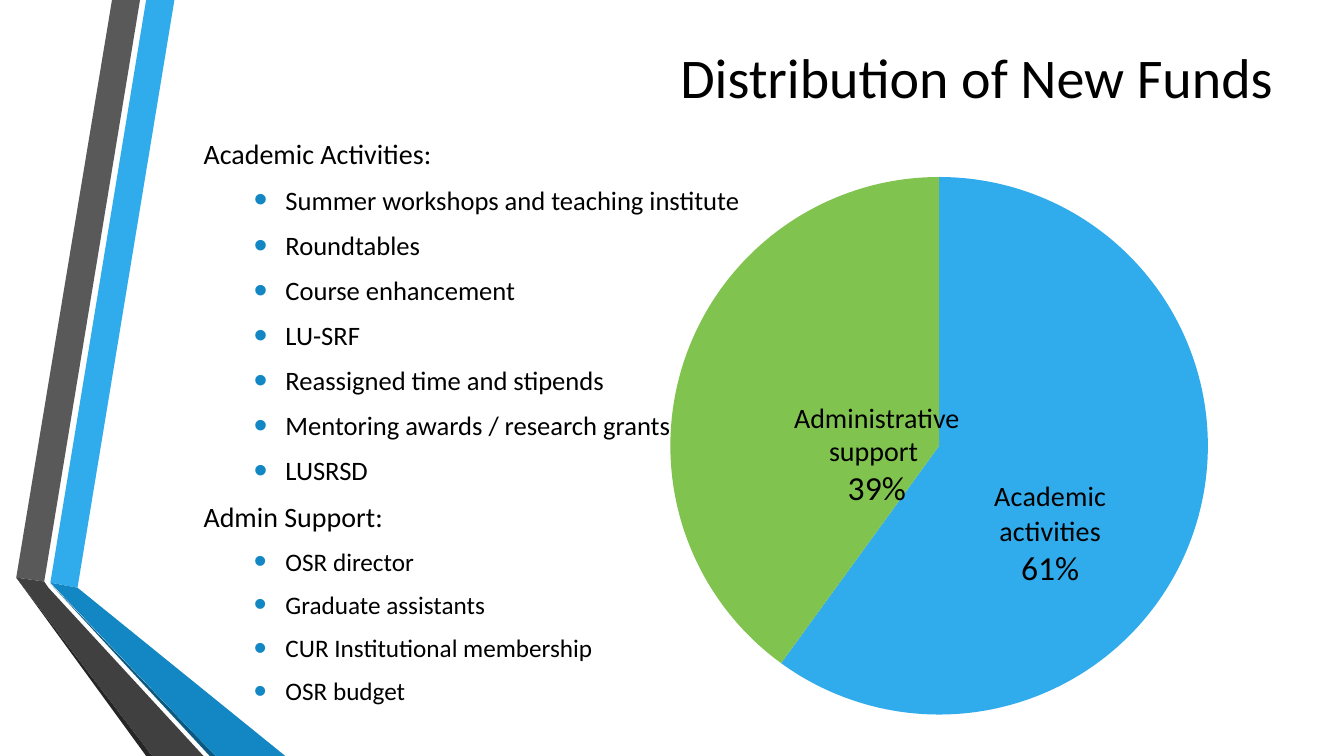
from dataclasses import dataclass

from lxml.etree import SubElement
from pptx import Presentation
from pptx.chart.data import CategoryChartData
from pptx.dml.color import RGBColor
from pptx.enum.chart import XL_CHART_TYPE, XL_LABEL_POSITION
from pptx.enum.text import MSO_ANCHOR, MSO_AUTO_SIZE, PP_ALIGN
from pptx.oxml import parse_xml
from pptx.oxml.ns import nsdecls, qn
from pptx.util import Pt

FONT = "Calibri"
BLACK = RGBColor(0x00, 0x00, 0x00)
SKY = RGBColor(0x30, 0xAC, 0xEC)
BLUE = RGBColor(0x12, 0x87, 0xC3)
NAVY = RGBColor(0x0C, 0x5A, 0x82)
GREY = RGBColor(0x59, 0x59, 0x59)
CHARCOAL = RGBColor(0x40, 0x40, 0x40)
SOOT = RGBColor(0x26, 0x26, 0x26)
GREEN = RGBColor(0x80, 0xC3, 0x4F)


@dataclass
class Band:
    color: RGBColor
    points: list[tuple[float, float]]


@dataclass
class Section:
    heading: str
    item_size: int
    items: list[str]


BANDS = [
    Band(SKY, [(36, 416.2), (55.4, 419.8), (124.6, 0), (104.4, 0)]),
    Band(GREY, [(100, 0), (80, 0), (11.6, 412.6), (31.6, 415.4)]),
    Band(SOOT, [(11.6, 412.6), (104.4, 540), (108.8, 540)]),
    Band(NAVY, [(36, 416.9), (149.8, 540), (154, 540)]),
    Band(BLUE, [(36, 416.2), (154, 540), (203.8, 540), (55.4, 419.8)]),
    Band(CHARCOAL, [(145.4, 540), (34.6, 419.8), (31.6, 415.4),
                    (11.6, 412.6), (108.8, 540)]),
]

SECTIONS = [
    Section("Academic Activities:", 19, [
        "Summer workshops and teaching institute", "Roundtables",
        "Course enhancement", "LU-SRF", "Reassigned time and stipends",
        "Mentoring awards / research grants", "LUSRSD"]),
    Section("Admin Support:", 18, [
        "OSR director", "Graduate assistants",
        "CUR Institutional membership", "OSR budget"]),
]


def place(sp, left: float, top: float, width: float, height: float) -> None:
    sp.left, sp.top = Pt(left), Pt(top)
    sp.width, sp.height = Pt(width), Pt(height)


def style(font, size: float) -> None:
    font.name, font.size = FONT, Pt(size)
    font.color.rgb = BLACK


def write_lines(tf, lines: list[tuple[str, int]]) -> None:
    """Fill a text frame with centred lines of given sizes."""
    for i, (text, size) in enumerate(lines):
        p = tf.add_paragraph() if i else tf.paragraphs[0]
        p.alignment = PP_ALIGN.CENTER
        r = p.add_run()
        r.text = text
        style(r.font, size)


def draw_band(slide, band: Band) -> None:
    start, *rest = [(Pt(x), Pt(y)) for x, y in band.points]
    builder = slide.shapes.build_freeform(*start, scale=1.0)
    builder.add_line_segments(rest, close=True)
    sp = builder.convert_to_shape()
    sp.shadow.inherit = False
    sp.fill.solid()
    sp.fill.fore_color.rgb = band.color
    sp.line.fill.background()


def add_line(tf, text: str, size: int, bulleted: bool) -> None:
    p = tf.paragraphs[0] if not tf.text else tf.add_paragraph()
    p.text = text
    p.level = int(bulleted)
    p.space_before, p.space_after = Pt(round(size * 0.18, 1)), Pt(6)
    style(p.font, size)
    pPr = p._p.get_or_add_pPr()
    pPr.set("marL", str(Pt(58.5 if bulleted else 0)))
    pPr.set("indent", str(Pt(-22.5 if bulleted else 0)))
    # Bullet properties precede the default run properties
    if bulleted:
        marks = [f'<a:buClr {nsdecls("a")}><a:srgbClr val="{BLUE}"/></a:buClr>',
                 f'<a:buSzPct {nsdecls("a")} val="145000"/>',
                 f'<a:buFont {nsdecls("a")} typeface="Arial"/>',
                 f'<a:buChar {nsdecls("a")} char="•"/>']
    else:
        marks = [f'<a:buNone {nsdecls("a")}/>']
    run_defaults = pPr.find(qn("a:defRPr"))
    for mark in marks:
        run_defaults.addprevious(parse_xml(mark))


def set_layout(parent, index: int, **values: str | float) -> None:
    """Give a chart part a manual layout."""
    for old in parent.findall(qn("c:layout")):
        parent.remove(old)
    layout = parse_xml(f'<c:layout {nsdecls("c")}/>')
    manual = SubElement(layout, qn("c:manualLayout"))
    for name, value in values.items():
        SubElement(manual, qn(f"c:{name}")).set("val", str(value))
    parent.insert(index, layout)


def draw_pie(slide) -> None:
    data = CategoryChartData()
    data.categories = ["Academic activities", "Administrative support"]
    data.add_series("Series 1", (60, 40))
    chart = slide.shapes.add_chart(
        XL_CHART_TYPE.PIE, Pt(411.8), Pt(118), Pt(595.5), Pt(422), data).chart
    chart.has_title = chart.has_legend = False
    style(chart.font, 10)
    plot = chart.plots[0]
    plot.vary_by_categories = True
    series = plot.series[0]
    for i, color in enumerate((SKY, GREEN)):
        fmt = series.points[i].format
        fmt.fill.solid()
        fmt.fill.fore_color.rgb = color
        fmt.line.fill.background()
    series.data_labels.show_value = False
    label = series.points[0].data_label
    write_lines(label.text_frame,
                [("Academic", 20), ("activities", 20), ("61%", 24)])
    label.position = XL_LABEL_POSITION.CENTER
    # Pie and label positions as fractions of the chart
    root = chart.element
    set_layout(root.find(f".//{qn('c:plotArea')}"), 0, layoutTarget="inner",
               xMode="edge", yMode="edge", x=0.11, y=0.02, w=0.65, h=0.91)
    set_layout(root.find(f".//{qn('c:dLbl')}"), 1, x=-0.02, y=0.08)


def main() -> None:
    prs = Presentation()
    prs.slide_width, prs.slide_height = Pt(960), Pt(540)
    slide = prs.slides.add_slide(prs.slide_layouts[1])

    # Folded ribbons on the left
    for band in BANDS:
        draw_band(slide, band)

    # Title
    title = slide.shapes.title
    place(title, 470, 18, 455, 72.7)
    title.text_frame.auto_size = MSO_AUTO_SIZE.NONE
    title.text_frame.vertical_anchor = MSO_ANCHOR.MIDDLE
    write_lines(title.text_frame, [("Distribution of New Funds", 40)])

    # Funded activities
    body = slide.placeholders[1]
    place(body, 138.2, 177.8, 789, 246.2)
    tf = body.text_frame
    tf.auto_size = MSO_AUTO_SIZE.NONE
    tf.vertical_anchor = MSO_ANCHOR.MIDDLE
    for section in SECTIONS:
        add_line(tf, section.heading, 20, False)
        for item in section.items:
            add_line(tf, item, section.item_size, True)

    # Pie chart and the label of its green slice
    draw_pie(slide)
    tf = slide.shapes.add_textbox(
        Pt(555.8), Pt(282.2), Pt(141), Pt(85)).text_frame
    tf.word_wrap = True
    write_lines(tf, [("Administrative support ", 20), ("39%", 24)])

    prs.save("out.pptx")


if __name__ == "__main__":
    main()
